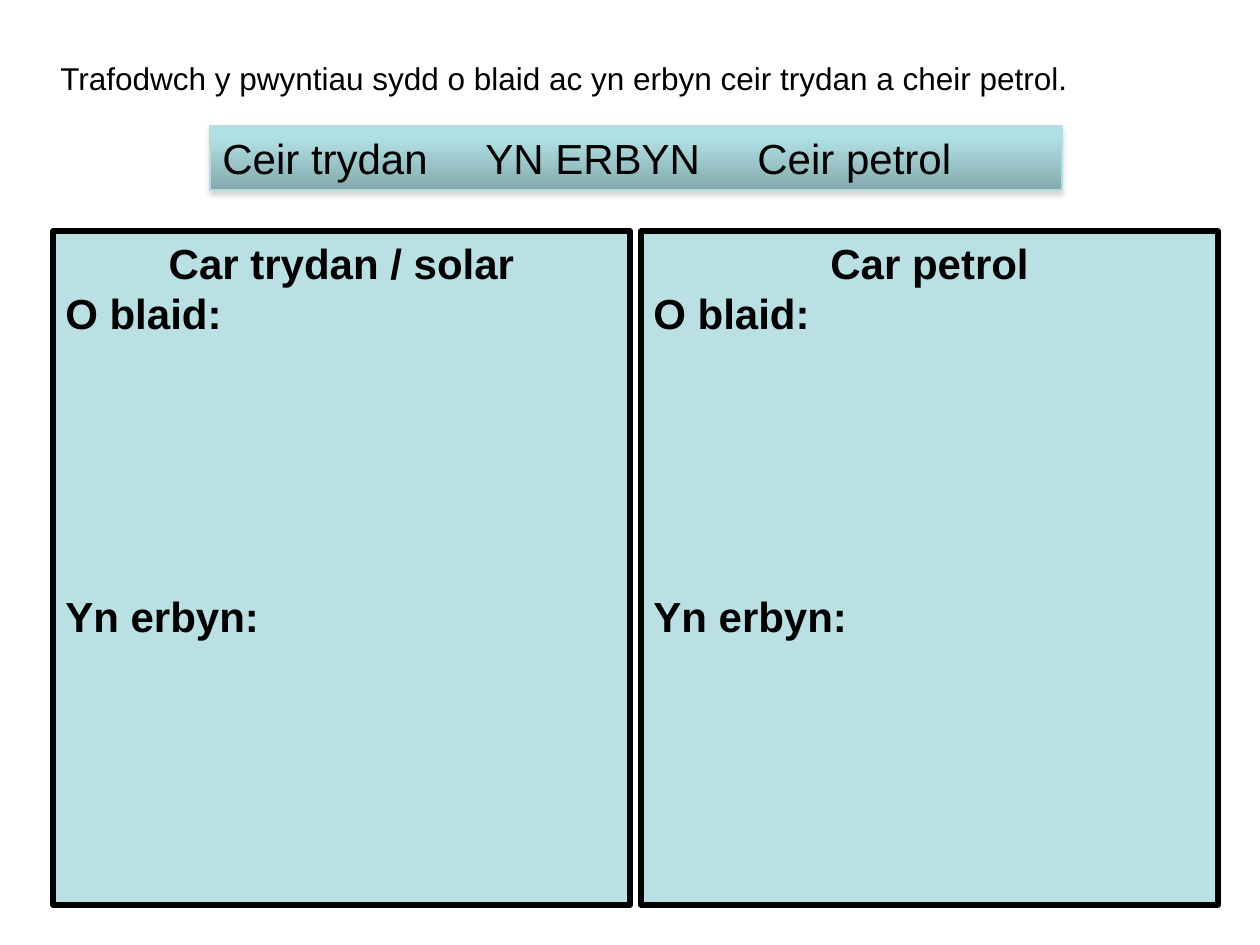
import dataclasses
import pptx
import pptx.dml.color
import pptx.enum.shapes
import pptx.enum.text
import pptx.oxml
import pptx.util

PX = 914400 / 126
NS = 'xmlns:a="http://schemas.openxmlformats.org/drawingml/2006/main"'


@dataclasses.dataclass(frozen=True)
class Theme:
    font: str = "Arial"
    ink: str = "000000"
    panel: str = "BBE0E3"
    edge: str = "B6DCDF"
    shade: str = "808080"
    ramp: tuple = ((0, "AFE0E4"), (20, "AFDEE2"), (100, "85AAAD"))
    small: int = 18
    large: int = 24


THEME = Theme()


def px(count):
    return pptx.util.Emu(round(count * PX))


def color(code):
    return pptx.dml.color.RGBColor.from_string(code)


def style(para, size, bold=False):
    para.alignment = pptx.enum.text.PP_ALIGN.LEFT
    para.font.name = THEME.font
    para.font.size = pptx.util.Pt(size)
    para.font.bold = bold
    para.font.color.rgb = color(THEME.ink)


def add_box(slide, box, edge, width):
    shape = slide.shapes.add_shape(
        pptx.enum.shapes.MSO_SHAPE.RECTANGLE, *map(px, box))
    shape.shadow.inherit = False
    shape.line.color.rgb = color(edge)
    shape.line.width = pptx.util.Pt(width)
    shape.text_frame.word_wrap = True
    shape.text_frame.vertical_anchor = pptx.enum.text.MSO_ANCHOR.TOP
    return shape


def add_task(slide, box, text):
    frame = slide.shapes.add_textbox(*map(px, box)).text_frame
    frame.word_wrap = True
    frame.text = text
    style(frame.paragraphs[0], THEME.small)


def add_banner(slide, box, words, tabs):
    """Place words at tab stops on a shaded bar with a soft shadow."""
    shape = add_box(slide, box, THEME.edge, 0.75)
    props = shape._element.spPr
    stops = "".join(f'<a:gs pos="{pos * 1000}"><a:srgbClr val="{code}"/></a:gs>'
                    for pos, code in THEME.ramp)
    props.insert(2, pptx.oxml.parse_xml(
        f'<a:gradFill {NS} rotWithShape="1"><a:gsLst>{stops}</a:gsLst>'
        '<a:lin ang="5400000" scaled="0"/></a:gradFill>'))
    props.find(pptx.oxml.ns.qn("a:effectLst")).append(pptx.oxml.parse_xml(
        f'<a:outerShdw {NS} blurRad="{pptx.util.Pt(3.1)}" '
        f'dist="{pptx.util.Pt(1.8)}" dir="5400000" rotWithShape="0">'
        f'<a:srgbClr val="{THEME.shade}"><a:alpha val="35000"/></a:srgbClr>'
        '</a:outerShdw>'))
    para = shape.text_frame.paragraphs[0]
    para.text = "\t".join(words)
    marks = "".join(f'<a:tab pos="{px(tab)}" algn="l"/>' for tab in tabs)
    para._p.get_or_add_pPr().append(
        pptx.oxml.parse_xml(f'<a:tabLst {NS}>{marks}</a:tabLst>'))
    style(para, THEME.large)


def add_panel(slide, box, title):
    shape = add_box(slide, box, THEME.ink, 3)
    shape.fill.solid()
    shape.fill.fore_color.rgb = color(THEME.panel)
    frame = shape.text_frame
    frame.text = "\n".join((title, "O blaid:", "Yn erbyn:"))
    for para in frame.paragraphs:
        style(para, THEME.large, True)
    head, _, con = frame.paragraphs
    head.alignment = pptx.enum.text.PP_ALIGN.CENTER
    con.space_before = pptx.util.Pt(144)


def main():
    deck = pptx.Presentation()
    deck.slide_width, deck.slide_height = px(1260), px(945)
    slide = deck.slides.add_slide(deck.slide_layouts[6])
    add_banner(slide, (210, 126, 852, 64),
               ("Ceir trydan", "YN ERBYN", "Ceir petrol"), (263, 535))
    left, top, width, height, gap = 53, 231, 577, 674, 11
    for col, title in enumerate(("Car trydan / solar", "Car petrol")):
        add_panel(slide, (left + col * (width + gap), top, width, height), title)
    add_task(slide, (48, 53, 1166, 50),
             "Trafodwch y pwyntiau sydd o blaid ac yn erbyn ceir trydan a cheir petrol.")
    deck.save("out.pptx")


if __name__ == "__main__":
    main()
